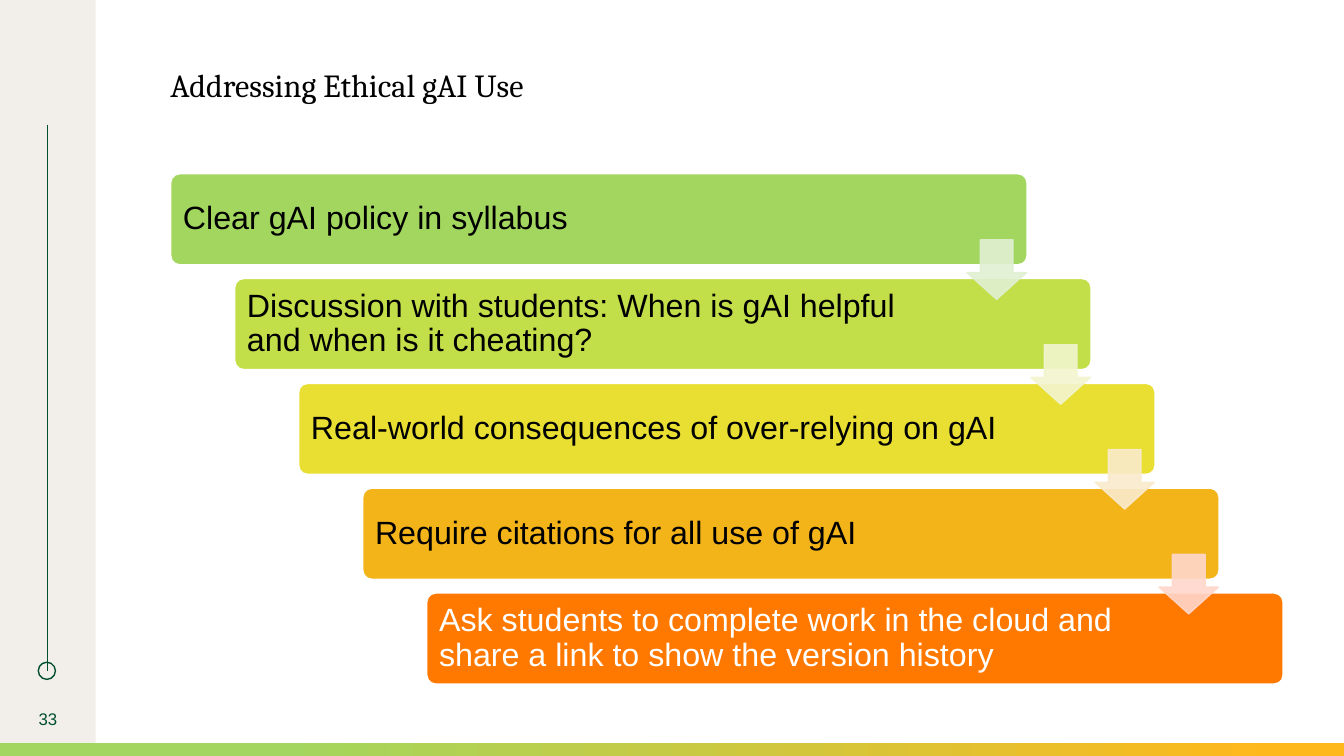
from lxml import etree
from pptx import Presentation
from pptx.dml.color import RGBColor
from pptx.enum import shapes, text
from pptx.oxml import ns
from pptx.util import Inches, Pt

WHITE = RGBColor(0xFF, 0xFF, 0xFF)
BLACK = RGBColor(0x00, 0x00, 0x00)
FOREST = RGBColor(0x00, 0x50, 0x30)
SAND = RGBColor(0xF2, 0xEE, 0xE9)
GREEN = RGBColor(0xA3, 0xD6, 0x5E)
LIME = RGBColor(0xC2, 0xDE, 0x49)
YELLOW = RGBColor(0xE8, 0xDF, 0x32)
AMBER = RGBColor(0xF3, 0xB4, 0x1A)
ORANGE = RGBColor(0xFF, 0x79, 0x00)
GOLD = RGBColor(0xFF, 0xB8, 0x1C)
PALE_GREEN = RGBColor(0xE0, 0xF0, 0xD2)
PALE_LIME = RGBColor(0xF2, 0xF5, 0xCF)
PALE_AMBER = RGBColor(0xFA, 0xEB, 0xCD)
PALE_ORANGE = RGBColor(0xFF, 0xD7, 0xCB)

# Each step sits lower and further right than the one before
STEP_X, STEP_Y = 0.635, 1.04
STEPS = [
    ("Clear gAI policy in syllabus", GREEN, BLACK),
    ("Discussion with students: When is gAI helpful and when is it cheating?", LIME, BLACK),
    ("Real-world consequences of over-relying on gAI", YELLOW, BLACK),
    ("Require citations for all use of gAI", AMBER, BLACK),
    ("Ask students to complete work in the cloud and share a link to show the version history",
     ORANGE, WHITE),
]
ARROW_COLORS = [PALE_GREEN, PALE_LIME, PALE_AMBER, PALE_ORANGE]


def add_shape(page, kind, left, top, width, height, fill=None, line=None, line_width=1):
    shape = page.shapes.add_shape(
        kind, Inches(left), Inches(top), Inches(width), Inches(height))
    shape.shadow.inherit = False
    if fill is None:
        shape.fill.background()
    else:
        shape.fill.solid()
        shape.fill.fore_color.rgb = fill
    if line is None:
        shape.line.fill.background()
    else:
        shape.line.color.rgb = line
        shape.line.width = Pt(line_width)
    return shape


def write(shape, words, size, font, color, align=text.PP_ALIGN.LEFT,
          anchor=text.MSO_ANCHOR.MIDDLE, insets=(0, 0, 0, 0), spacing=0.9):
    frame = shape.text_frame
    frame.word_wrap = True
    frame.vertical_anchor = anchor
    (frame.margin_left, frame.margin_top,
     frame.margin_right, frame.margin_bottom) = [Inches(inset) for inset in insets]
    para = frame.paragraphs[0]
    para.alignment = align
    para.line_spacing = spacing
    span = para.add_run()
    span.text = words
    span.font.size = Pt(size)
    span.font.name = font
    span.font.color.rgb = color


def add_text(page, left, top, width, height, words, size, font, color, **layout):
    box = page.shapes.add_textbox(Inches(left), Inches(top), Inches(width), Inches(height))
    write(box, words, size, font, color, **layout)


def add_line(page, x1, y1, x2, y2, color):
    line = page.shapes.add_connector(
        shapes.MSO_CONNECTOR.STRAIGHT, Inches(x1), Inches(y1), Inches(x2), Inches(y2))
    line.line.color.rgb = color
    line.line.width = Pt(1)
    etree.SubElement(line._element.spPr, ns.qn("a:effectLst"))


def add_gradient_band(page, left, top, width, height):
    band = add_shape(page, shapes.MSO_SHAPE.RECTANGLE, left, top, width, height)
    band.fill.gradient()
    band.fill.gradient_angle = 180
    for stop, color, position in zip(band.fill.gradient_stops, (GOLD, GREEN), (0.05, 0.79)):
        stop.color.rgb = color
        stop.position = position


def add_step(page, index, words, fill, color):
    step = add_shape(page, shapes.MSO_SHAPE.ROUNDED_RECTANGLE,
                     1.69 + index * STEP_X, 1.72 + index * STEP_Y, 8.5, 0.91,
                     fill, WHITE, 1.5)
    step.adjustments[0] = 0.1
    # The wide right inset keeps the words clear of the arrow
    write(step, words, 23, "Arial", color, insets=(0.1, 0.1, 1.33, 0.1))


def add_arrow(page, index, color):
    arrow = add_shape(page, shapes.MSO_SHAPE.DOWN_ARROW,
                      9.59 + index * STEP_X, 2.38 + index * STEP_Y, 0.59, 0.59,
                      color, color)
    arrow.adjustments[0] = 0.55
    arrow.adjustments[1] = 0.45
    for tint in arrow._element.spPr.iter(ns.qn("a:srgbClr")):
        etree.SubElement(tint, ns.qn("a:alpha"), val="90000")


def main():
    deck = Presentation()
    deck.slide_width, deck.slide_height = Inches(13.33), Inches(7.5)
    page = deck.slides.add_slide(deck.slide_layouts[6])

    # Sidebar, bottom band and page number
    add_shape(page, shapes.MSO_SHAPE.RECTANGLE, 0, 0, 0.95, 7.5, SAND)
    add_line(page, 0.47, 1.24, 0.47, 6.66, FOREST)
    add_shape(page, shapes.MSO_SHAPE.OVAL, 0.38, 6.57, 0.17, 0.17, line=FOREST)
    add_gradient_band(page, 0, 7.37, 13.33, 0.13)
    add_text(page, 0, 6.93, 0.95, 0.4, "33", 12, "Arial", FOREST,
             align=text.PP_ALIGN.CENTER, spacing=1.0)

    # Title
    add_text(page, 1.69, 0.69, 4.12, 0.45, "Addressing Ethical gAI Use", 23, "Cambria", BLACK,
             anchor=text.MSO_ANCHOR.TOP)

    # Staircase of steps, with the arrows on top
    for index, (words, fill, color) in enumerate(STEPS):
        add_step(page, index, words, fill, color)
    for index, color in enumerate(ARROW_COLORS):
        add_arrow(page, index, color)

    deck.save("out.pptx")


if __name__ == "__main__":
    main()
